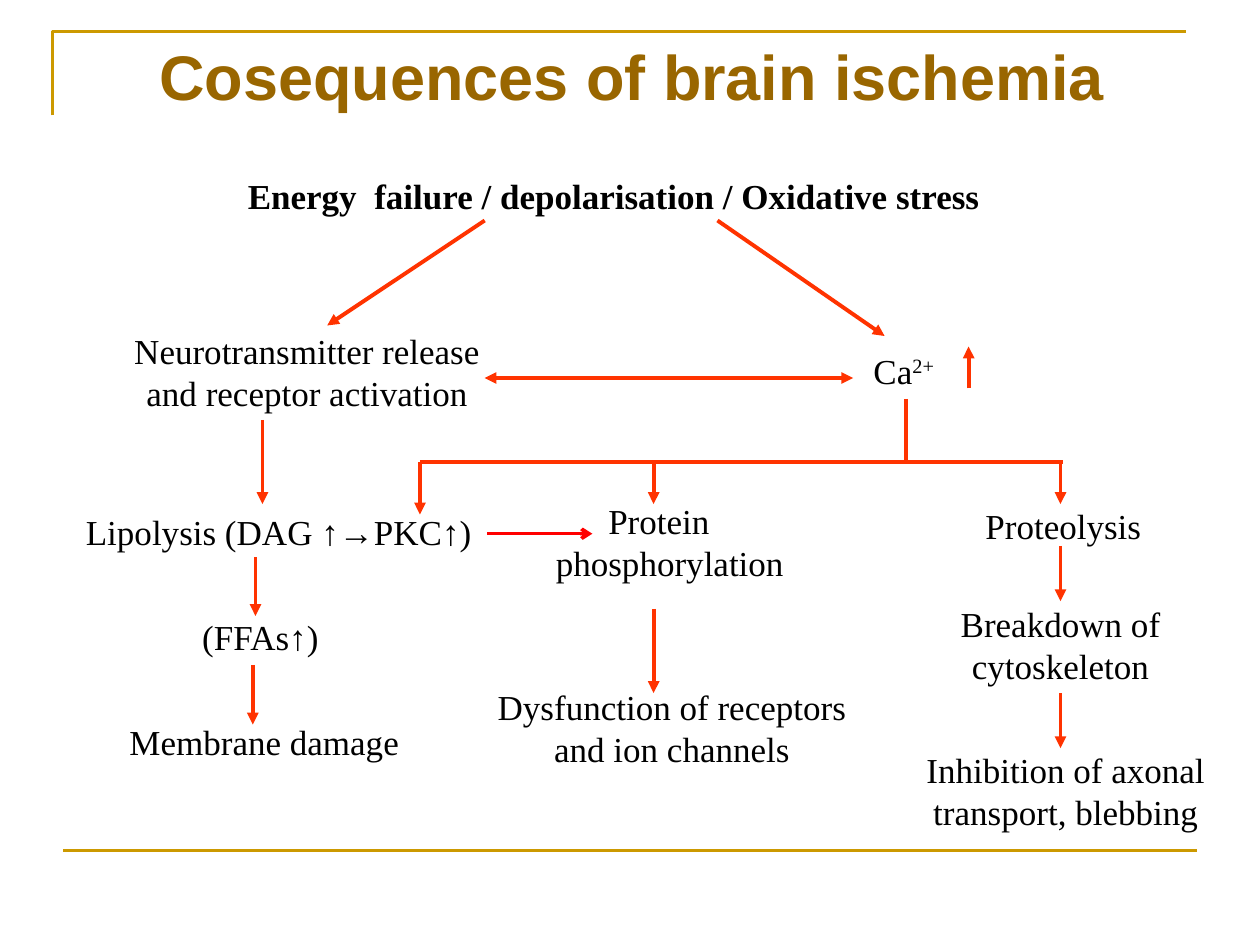
from pptx import Presentation
from pptx.dml.color import RGBColor
from pptx.enum.shapes import MSO_CONNECTOR
from pptx.enum.text import PP_ALIGN
from pptx.oxml.ns import qn
from pptx.util import Pt
from lxml import etree

STRAIGHT = MSO_CONNECTOR.STRAIGHT
LEFT = PP_ALIGN.LEFT
CENTER = PP_ALIGN.CENTER
COLORS = {"rule": "CC9900", "title": "996600", "text": "000000",
          "flow": "FF3300", "link": "FF0000"}
ONE_LINE = 31.5
TWO_LINES = 55.5


def color(name):
    return RGBColor.from_string(COLORS[name])


def add_text(slide, left, top, width, height, lines, size=20, font="Times New Roman",
             fill="text", bold=False, align=LEFT, wrap=False, indent=0, superscript=""):
    box = slide.shapes.add_textbox(Pt(left), Pt(top), Pt(width), Pt(height))
    frame = box.text_frame
    frame.word_wrap = wrap
    for index, line in enumerate(lines):
        paragraph = frame.paragraphs[0] if index == 0 else frame.add_paragraph()
        paragraph.alignment = align
        if index == 0 and indent:
            paragraph._p.get_or_add_pPr().set("indent", str(Pt(indent)))
        parts = [line, superscript] if superscript else [line]
        for position, part in enumerate(parts):
            run = paragraph.add_run()
            run.text = part
            run.font.size = Pt(size)
            run.font.name = font
            run.font.bold = bold
            run.font.color.rgb = color(fill)
            if position:
                run.font._element.set("baseline", "30000")


def add_line(slide, start, end, stroke="flow", width=2.25, head=None, tail=None):
    line = slide.shapes.add_connector(STRAIGHT, *map(Pt, start + end))
    line.line.color.rgb = color(stroke)
    line.line.width = Pt(width)
    outline = line.line._get_or_add_ln()
    for tag, kind in (("a:headEnd", head), ("a:tailEnd", tail)):
        if kind:
            etree.SubElement(outline, qn(tag), type=kind)
    etree.SubElement(line._element.spPr, qn("a:effectLst"))


def add_arrow(slide, start, end, tail="triangle", **style):
    add_line(slide, start, end, tail=tail, **style)


def add_frame(slide, left, top, width, height):
    builder = slide.shapes.build_freeform(Pt(left), Pt(top + 48))
    builder.add_line_segments([(Pt(left), Pt(top)), (Pt(left + width), Pt(top))], close=False)
    corner = builder.convert_to_shape()
    corner.shadow.inherit = False
    corner.fill.background()
    corner.line.color.rgb = color("rule")
    corner.line.width = Pt(1.5)
    bottom = top + height
    add_line(slide, (left + 6, bottom), (left + 6 + width, bottom), stroke="rule", width=1.5)


def add_title(slide, left, top, width, height):
    add_text(slide, left, top, width, height, ["Cosequences of brain ischemia"],
             size=36, font="Arial", fill="title", bold=True)


def add_causes(slide, left, top):
    add_text(slide, left + 65.5, top, 435.5, ONE_LINE,
             ["Energy  failure / depolarisation / Oxidative stress"], bold=True)
    add_arrow(slide, (left + 208, top + 30), (left + 118, top + 90))
    add_arrow(slide, (left + 341, top + 30), (left + 436.5, top + 96))
    add_text(slide, left, top + 88.5, 213, TWO_LINES,
             ["Neurotransmitter release", "and receptor activation"], align=CENTER)
    add_text(slide, left + 423, top + 100, 51, ONE_LINE, ["Ca"], superscript="2+")
    add_arrow(slide, (left + 208, top + 120), (left + 418.5, top + 120), head="triangle")
    add_arrow(slide, (left + 484.5, top + 126), (left + 484.5, top + 102))


def add_calcium_branches(slide, left, top):
    bar = top + 36
    add_line(slide, (left + 277.5, top), (left + 277.5, bar))
    add_line(slide, (left, bar), (left + 367.5, bar))
    for offset, drop in ((0, 30), (133.5, 24), (366, 24)):
        add_arrow(slide, (left + offset, bar), (left + offset, bar + drop))


def add_lipolysis(slide, left, top):
    for offset, start, end in ((108, 0, 48), (104, 78.5, 112), (102.5, 140, 174)):
        add_arrow(slide, (left + offset, top + start), (left + offset, top + end))
    add_text(slide, left, top + 48, 240.5, ONE_LINE, ["Lipolysis (DAG ↑→PKC↑)"])
    add_text(slide, left + 66.5, top + 108, 83.5, ONE_LINE, ["(FFAs↑)"])
    add_text(slide, left + 24, top + 168, 170, ONE_LINE, ["Membrane damage"], align=CENTER)
    add_arrow(slide, (left + 236.5, top + 65), (left + 296.5, top + 65),
              tail="arrow", stroke="link", width=2)


def add_phosphorylation(slide, left, top):
    add_text(slide, left + 34.5, top, 145.5, TWO_LINES, ["Protein", "phosphorylation"], indent=30)
    add_arrow(slide, (left + 97.5, top + 66), (left + 97.5, top + 114))
    add_text(slide, left, top + 106, 216, TWO_LINES,
             ["Dysfunction of receptors and ion channels"], align=CENTER, wrap=True)


def add_proteolysis(slide, left, top):
    add_text(slide, left + 34, top, 103.5, ONE_LINE, ["Proteolysis"])
    add_text(slide, left + 8.5, top + 56, 151, TWO_LINES,
             ["Breakdown of", "cytoskeleton"], align=CENTER, wrap=True)
    add_text(slide, left, top + 139.5, 174, TWO_LINES,
             ["Inhibition of axonal", "transport, blebbing"], align=CENTER)
    for start in (27.5, 111.5):
        add_arrow(slide, (left + 84, top + start), (left + 84, top + start + 31.5))


def main():
    deck = Presentation()
    deck.slide_width, deck.slide_height = Pt(720), Pt(540)
    slide = deck.slides.add_slide(deck.slide_layouts[6])
    add_frame(slide, 30, 18, 648, 468)
    add_title(slide, 84, 18, 560, 51)
    add_causes(slide, 69, 96)
    add_calcium_branches(slide, 240, 228)
    add_lipolysis(slide, 42, 240)
    add_phosphorylation(slide, 276, 282)
    add_proteolysis(slide, 522, 284.5)
    deck.save("out.pptx")


if __name__ == "__main__":
    main()
